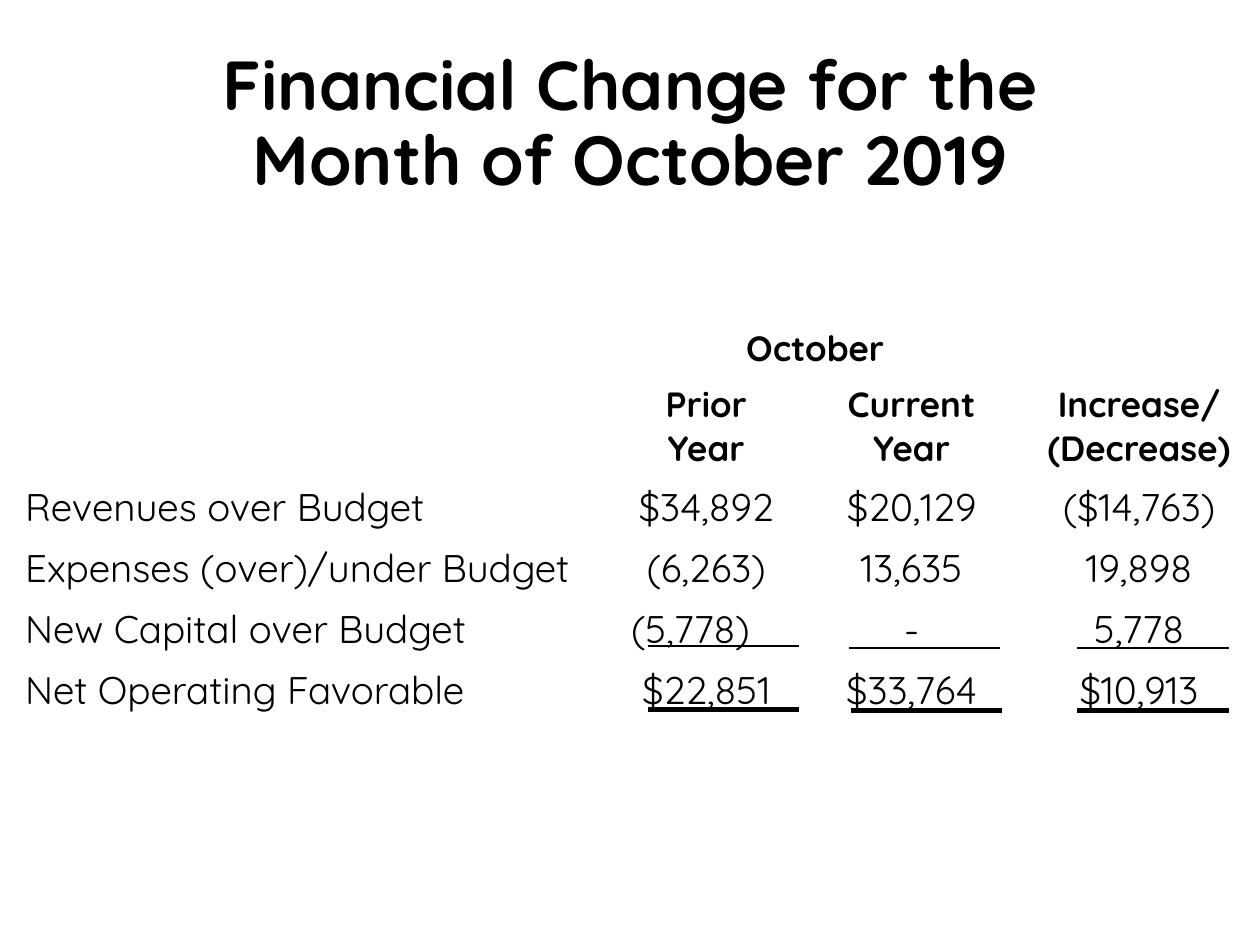
from pptx import Presentation
from pptx.dml.color import RGBColor
from pptx.enum.shapes import MSO_CONNECTOR as Connector
from pptx.enum.text import MSO_ANCHOR as Anchor, MSO_AUTO_SIZE as AutoSize, PP_ALIGN as Align
from pptx.oxml.ns import qn
from pptx.util import Pt
from lxml import etree

PX = 9144  # 100 px to the inch
FONT = "Quicksand"
BLACK = "000000"


def color(value):
    return RGBColor.from_string(value)


def style(para, size, bold, align):
    para.alignment = align
    font = para.font
    font.name, font.size, font.bold = FONT, Pt(size), bold
    font.color.rgb = color(BLACK)


deck = Presentation()
deck.slide_width, deck.slide_height = 1000 * PX, 750 * PX
page = deck.slides.add_slide(deck.slide_layouts[5])

# Title
title = page.shapes.title
title.left, title.top, title.width, title.height = 90 * PX, 35 * PX, 820 * PX, 200 * PX
frame = title.text_frame
frame.text = "Financial Change for the\vMonth of October 2019"
frame.word_wrap = True
frame.auto_size = AutoSize.NONE
frame.vertical_anchor = Anchor.TOP
frame.paragraphs[0].line_spacing = 0.9
style(frame.paragraphs[0], 39.6, True, Align.CENTER)

# Financial table
rows = [
    ["", "October", "", ""],
    ["", "Prior\nYear", "Current Year", "Increase/ (Decrease)"],
    ["Revenues over Budget", "$34,892", "$20,129", "($14,763)"],
    ["Expenses (over)/under Budget", "(6,263)", "13,635", "19,898"],
    ["New Capital over Budget", "(5,778)", "-", "5,778"],
    ["Net Operating Favorable", "$22,851", "$33,764", "$10,913"],
    ["", "", "", ""],
]
widths = [474, 153, 173, 188]
table = page.shapes.add_table(
    len(rows), len(widths), 10 * PX, 254 * PX, sum(widths) * PX, 41 * len(rows) * PX
).table
table.first_row = table.horz_banding = False
for column, width in zip(table.columns, widths):
    column.width = width * PX
table.cell(0, 1).merge(table.cell(0, 2))

for r, row in enumerate(rows):
    heading = r < 2
    for c, text in enumerate(row):
        cell = table.cell(r, c)
        cell.fill.background()
        if not text:
            continue
        cell.text = text
        for para in cell.text_frame.paragraphs:
            style(para, 20 if heading else 22, heading, Align.CENTER if c else Align.LEFT)
table.cell(4, 1).margin_right = 35 * PX  # sets the deduction left of centre

# Rules under the last two amounts of each column: left, top, weight
rules = [
    (514, 563, 3), (855, 564, 3), (675, 564, 3),
    (514, 513, 1.25), (855, 514, 1.25), (674, 514, 1.25),
]
for left, top, weight in rules:
    rule = page.shapes.add_connector(
        Connector.STRAIGHT, left * PX, top * PX, (left + 120) * PX, top * PX
    )
    rule.line.color.rgb = color(BLACK)
    rule.line.width = Pt(weight)
    etree.SubElement(rule._element.spPr, qn("a:effectLst"))

deck.save("out.pptx")
